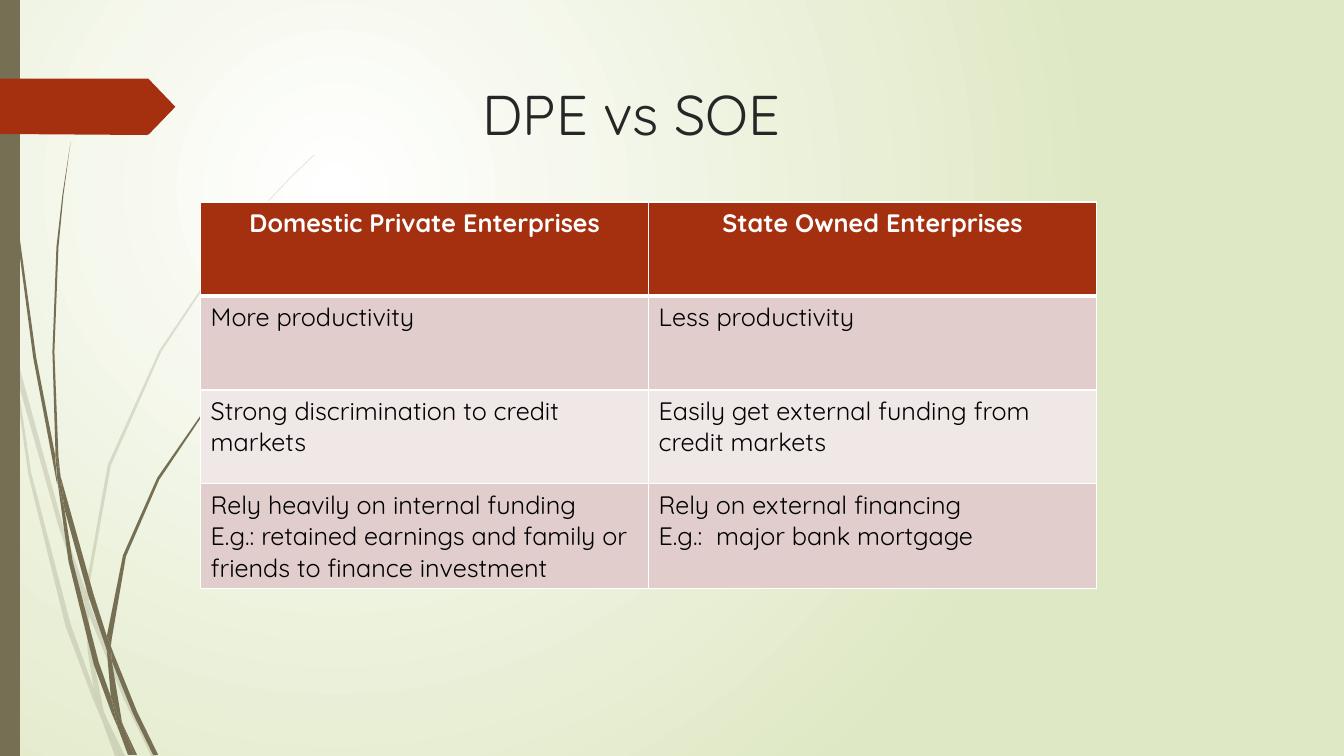
from dataclasses import dataclass

import lxml.etree
import pptx
import pptx.dml.color
import pptx.enum.shapes
import pptx.enum.text
import pptx.oxml.ns
import pptx.slide
import pptx.table
import pptx.util

Pt = pptx.util.Pt
RGBColor = pptx.dml.color.RGBColor
qn = pptx.oxml.ns.qn

WHITE = RGBColor(0xFF, 0xFF, 0xFF)
BLACK = RGBColor(0x00, 0x00, 0x00)
CHARCOAL = RGBColor(0x26, 0x26, 0x26)
PALE_GREEN = RGBColor(0xDF, 0xE8, 0xC4)
OLIVE = RGBColor(0x76, 0x6F, 0x54)
RUST = RGBColor(0xA5, 0x30, 0x10)
ROSE = RGBColor(0xE1, 0xCD, 0xCC)
PALE_ROSE = RGBColor(0xF0, 0xE8, 0xE7)

FONT = "Quicksand"
PAGE_WIDTH, PAGE_HEIGHT = Pt(960), Pt(540)
CONTENT_LEFT = Pt(143.3)
OUTLINE_UNIT = Pt(0.72)  # outlines are drawn on a grid of 0.72 points
ROW_HEIGHT, COLUMN_WIDTH = Pt(67.1), Pt(320)

Point = tuple[int, int]


@dataclass(frozen=True)
class Outline:
    """A filled polygon; opacity is a percentage."""
    points: list[Point]
    color: RGBColor = OLIVE
    opacity: int = 100


@dataclass(frozen=True)
class Comparison:
    """One table row; every string in a cell is a paragraph."""
    private: list[str]
    state: list[str]
    fill: RGBColor


FAINT_GRASS = [
    [(11, 350), (9, 322), (0, 282), (0, 299), (10, 344)],
    [(58, 522), (84, 599), (85, 586), (62, 520), (14, 345), (17, 376)],
    [(92, 607), (88, 596), (88, 610), (123, 694), (150, 750), (155, 750), (127, 692)],
    [(119, 750), (124, 750), (105, 711)],
    [(93, 683), (70, 619), (31, 469), (17, 376), (11, 350), (28, 470), (65, 621),
     (92, 693), (101, 714), (99, 707)],
    [(84, 599), (87, 646), (93, 683), (96, 692), (105, 711), (103, 706), (91, 646),
     (88, 610), (88, 608)],
    [(88, 584), (110, 462), (160, 349), (229, 245), (268, 198), (290, 175), (312, 154),
     (312, 153), (289, 175), (268, 197), (228, 244), (158, 348), (107, 461), (85, 584),
     (85, 586), (88, 596)],
    [(101, 714), (114, 750), (119, 750)],
    [(88, 608), (88, 610), (88, 596), (85, 586), (84, 599)],
    [(96, 692), (93, 683), (99, 707), (101, 714), (119, 750), (105, 711)],
]
DARK_GRASS = [
    [(7, 110), (17, 233), (33, 355), (56, 477), (57, 481), (55, 457), (55, 453),
     (36, 355), (19, 232), (8, 109), (5, 48), (4, 0), (3, 0), (4, 48)],
    [(88, 592), (106, 645), (106, 633), (106, 631), (93, 590), (60, 472), (64, 505)],
    [(113, 649), (110, 641), (111, 656), (132, 708), (152, 749), (157, 749), (136, 706)],
    [(110, 691), (98, 657), (72, 556), (64, 505), (57, 477), (68, 557), (93, 659),
     (111, 708), (117, 722), (116, 717)],
    [(60, 472), (58, 453), (54, 349), (58, 245), (63, 193), (70, 141), (62, 193),
     (56, 245), (52, 349), (55, 449)],
    [(133, 749), (136, 749), (122, 719)],
    [(57, 477), (64, 505), (60, 472), (55, 449), (55, 453)],
    [(111, 633), (125, 552), (158, 476), (205, 406), (231, 374), (245, 359), (261, 344),
     (260, 344), (245, 358), (231, 373), (204, 405), (156, 474), (122, 551), (106, 631),
     (110, 641)],
    [(117, 722), (127, 749), (131, 749)],
    [(106, 645), (110, 691), (116, 706), (122, 719), (121, 716), (111, 656), (109, 651)],
    [(106, 645), (109, 651), (111, 656), (110, 641), (106, 631), (106, 633)],
    [(116, 706), (110, 691), (116, 717), (117, 722), (130, 749), (133, 749), (122, 719)],
]
SIDE_BAR = [(0, 0), (20, 0), (20, 750), (0, 750)]
ARROW_TAG = [(0, 78), (147, 78), (149, 80), (174, 106), (148, 133), (146, 134), (0, 133)]

DECORATION = [
    *(Outline(points, opacity=20) for points in FAINT_GRASS),
    *(Outline(points) for points in DARK_GRASS),
    Outline(SIDE_BAR),
    Outline(ARROW_TAG, RUST),
]

COMPARISONS = [
    Comparison(["Domestic Private Enterprises"], ["State Owned Enterprises"], RUST),
    Comparison(["More productivity"], ["Less productivity"], ROSE),
    Comparison(["Strong discrimination to credit markets"],
               ["Easily get external funding from credit markets"], PALE_ROSE),
    Comparison(["Rely heavily on internal funding",
                "E.g.: retained earnings and family or friends to finance investment"],
               ["Rely on external financing", "E.g.:  major bank mortgage"], ROSE),
]


def paint_background(page: pptx.slide.Slide) -> None:
    fill = page.background.fill
    fill.gradient()
    for stop, color in zip(fill.gradient_stops, (WHITE, PALE_GREEN)):
        stop.color.rgb = color
    gradient = next(page.element.iter(qn("a:gradFill")))
    gradient.remove(gradient.find(qn("a:lin")))
    circle = lxml.etree.SubElement(gradient, qn("a:path"), {"path": "circle"})
    lxml.etree.SubElement(circle, qn("a:fillToRect"),
                          {"l": "50000", "t": "50000", "r": "100000", "b": "100000"})


def draw_outline(page: pptx.slide.Slide, outline: Outline) -> None:
    start, *others = outline.points
    builder = page.shapes.build_freeform(*start, scale=OUTLINE_UNIT)
    builder.add_line_segments(others, close=True)
    shape = builder.convert_to_shape()
    shape.shadow.inherit = False
    shape.line.fill.background()
    shape.fill.solid()
    shape.fill.fore_color.rgb = outline.color
    if outline.opacity < 100:
        color = next(shape.element.spPr.iter(qn("a:srgbClr")))
        lxml.etree.SubElement(color, qn("a:alpha"), {"val": str(outline.opacity * 1000)})


def write_title(page: pptx.slide.Slide, text: str) -> None:
    title = page.shapes.title
    title.left, title.top, title.width, title.height = CONTENT_LEFT, Pt(53.3), Pt(702), Pt(65.5)
    frame = title.text_frame
    frame.text = text
    frame.auto_size = pptx.enum.text.MSO_AUTO_SIZE.NONE
    frame.vertical_anchor = pptx.enum.text.MSO_ANCHOR.TOP
    frame.margin_left = Pt(201.5)
    para = frame.paragraphs[0]
    para.alignment = pptx.enum.text.PP_ALIGN.LEFT
    para.font.name, para.font.size = FONT, Pt(40)
    para.font.color.rgb = CHARCOAL


def set_borders(cell: pptx.table._Cell, top: int, bottom: int) -> None:
    properties = cell._tc.get_or_add_tcPr()
    for index, (side, width) in enumerate({"L": 1, "R": 1, "T": top, "B": bottom}.items()):
        line = properties.makeelement(qn(f"a:ln{side}"), {"w": str(Pt(width))})
        solid = lxml.etree.SubElement(line, qn("a:solidFill"))
        lxml.etree.SubElement(solid, qn("a:srgbClr"), {"val": str(WHITE)})
        properties.insert(index, line)


def fill_cell(cell: pptx.table._Cell, lines: list[str], fill: RGBColor, header: bool) -> None:
    cell.fill.solid()
    cell.fill.fore_color.rgb = fill
    cell.text = "\n".join(lines)
    align = pptx.enum.text.PP_ALIGN
    for para in cell.text_frame.paragraphs:
        para.alignment = align.CENTER if header else align.LEFT
        para.font.name, para.font.size, para.font.bold = FONT, Pt(18), header
        para.font.color.rgb = WHITE if header else BLACK


def add_comparison_table(page: pptx.slide.Slide) -> None:
    count = len(COMPARISONS)
    table = page.shapes.add_table(count, 2, CONTENT_LEFT, Pt(144.3),
                                  2 * COLUMN_WIDTH, count * ROW_HEIGHT).table
    for column in table.columns:
        column.width = COLUMN_WIDTH
    for row, comparison in enumerate(COMPARISONS):
        for column, lines in enumerate((comparison.private, comparison.state)):
            cell = table.cell(row, column)
            fill_cell(cell, lines, comparison.fill, header=row == 0)
            set_borders(cell, top=3 if row == 1 else 1, bottom=3 if row == 0 else 1)


def main() -> None:
    deck = pptx.Presentation()
    deck.slide_width, deck.slide_height = PAGE_WIDTH, PAGE_HEIGHT
    page = deck.slides.add_slide(deck.slide_layouts.get_by_name("Title Only"))

    # Background and decoration
    paint_background(page)
    for outline in DECORATION:
        draw_outline(page, outline)

    # Title and comparison
    write_title(page, "DPE vs SOE")
    add_comparison_table(page)

    deck.save("out.pptx")


if __name__ == "__main__":
    main()
